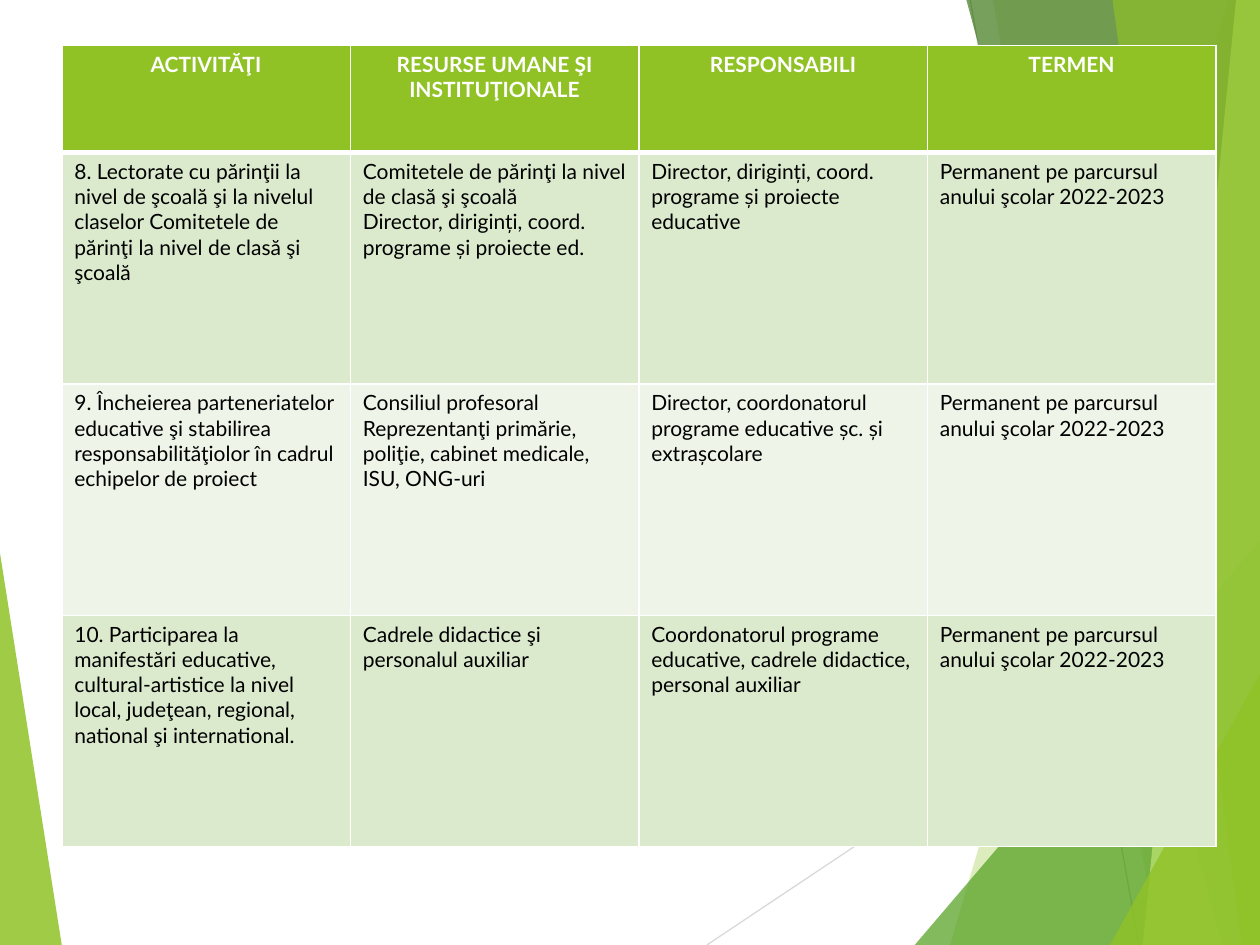
import pptx
import pptx.dml.color
import pptx.enum.shapes
import pptx.enum.text
import pptx.oxml
import pptx.oxml.ns
import pptx.util
from pptx.util import Inches

COLOURS = {
    "white": "FFFFFF", "black": "000000", "green": "90C226", "leaf": "54A021",
    "forest": "3F7819", "lime": "C0E474", "band_dark": "DBE9CD",
    "band_light": "EEF4E8", "grey": "D9D9D9", "mid_grey": "BFBFBF",
}
FONT = "Lato"
TERM = "Permanent pe parcursul anului şcolar 2022-2023"
HEADERS = ["ACTIVITĂŢI", "RESURSE UMANE ŞI INSTITUŢIONALE", "RESPONSABILI", "TERMEN"]
ACTIVITIES = [
    ["8. Lectorate cu părinţii la nivel de şcoală şi la nivelul claselor "
     "Comitetele de părinţi la nivel de clasă şi şcoală",
     "Comitetele de părinţi la nivel de clasă şi şcoală\n"
     "Director, diriginți, coord. programe și proiecte ed.",
     "Director, diriginți, coord. programe și proiecte educative", TERM],
    ["9. Încheierea parteneriatelor educative şi stabilirea "
     "responsabilităţiolor în cadrul echipelor de proiect",
     "Consiliul profesoral Reprezentanţi primărie, poliţie, cabinet medicale, ISU, ONG-uri",
     "Director, coordonatorul programe educative șc. și extrașcolare", TERM],
    ["10. Participarea la manifestări educative, cultural-artistice la nivel "
     "local, judeţean, regional, national şi international.",
     "Cadrele didactice şi personalul auxiliar",
     "Coordonatorul programe educative, cadrele didactice, personal auxiliar", TERM],
]
# Each facet reaches the right edge: top x, top y, bottom x, colour, opacity %
FACETS = [
    (9.75, 0, 7.54, "green", 30),
    (7.88, 0, 9.19, "green", 20),
    (10, 4.29, 7.26, "leaf", 72),
    (7.67, 0, 9.7, "forest", 70),
    (9.81, 0, 9.07, "lime", 70),
    (8.83, 0, 9.86, "green", 65),
    (10, 5.35, 8.81, "green", 80),
]


def rgb(name):
    return pptx.dml.color.RGBColor.from_string(COLOURS[name])


def add_polygon(slide, points, colour, opacity):
    points = [(Inches(x), Inches(y)) for x, y in dict.fromkeys(points)]
    builder = slide.shapes.build_freeform(*points[0], scale=1.0)
    builder.add_line_segments(points[1:], close=True)
    shape = builder.convert_to_shape()
    shape.shadow.inherit = False
    shape.line.fill.background()
    shape.fill.solid()
    shape.fill.fore_color.rgb = rgb(colour)
    colour_node = shape.fill._xPr.find(".//" + pptx.oxml.ns.qn("a:srgbClr"))
    colour_node.append(pptx.oxml.parse_xml(
        f'<a:alpha {pptx.oxml.ns.nsdecls("a")} val="{opacity * 1000}"/>'))


def add_hairline(slide, start, end, colour):
    line = slide.shapes.add_connector(
        pptx.enum.shapes.MSO_CONNECTOR.STRAIGHT, *map(Inches, start + end))
    line.line.color.rgb = rgb(colour)
    line.line.width = pptx.util.Pt(0.75)
    line._element.spPr.append(pptx.oxml.parse_xml(
        f'<a:effectLst {pptx.oxml.ns.nsdecls("a")}/>'))


def add_facet_background(slide, left, top, width, height):
    right, bottom = left + width, top + height
    add_polygon(slide, [(left, top + 4.39), (left + 0.49, bottom), (left, bottom)],
                "green", 85)
    add_hairline(slide, (left + 5.61, bottom), (right, top + 4.57), "grey")
    add_hairline(slide, (left + 7.7, top), (left + 9.04, bottom), "mid_grey")
    for top_x, top_y, bottom_x, colour, opacity in FACETS:
        add_polygon(slide, [(left + top_x, top + top_y), (left + bottom_x, bottom),
                            (right, bottom), (right, top + top_y)], colour, opacity)


def set_borders(cell, widths):
    """Draw white borders; widths maps L, R, T, B to points, in that order."""
    properties = cell._tc.get_or_add_tcPr()
    for index, (side, width) in enumerate(widths.items()):
        properties.insert(index, pptx.oxml.parse_xml(
            f'<a:ln{side} {pptx.oxml.ns.nsdecls("a")} w="{pptx.util.Pt(width)}">'
            f'<a:solidFill><a:srgbClr val="{COLOURS["white"]}"/></a:solidFill>'
            f'</a:ln{side}>'))


def fill_cell(cell, text, fill, is_header):
    cell.fill.solid()
    cell.fill.fore_color.rgb = rgb(fill)
    cell.text = text
    font_format = {"name": FONT, "size": pptx.util.Pt(12), "bold": is_header}
    for paragraph in cell.text_frame.paragraphs:
        if is_header:
            paragraph.alignment = pptx.enum.text.PP_ALIGN.CENTER
        for run in paragraph.runs:
            for name, value in font_format.items():
                setattr(run.font, name, value)
            run.font.color.rgb = rgb("white" if is_header else "black")


def add_activity_table(slide, left, top, width, height, header_height):
    rows = [HEADERS] + ACTIVITIES
    table = slide.shapes.add_table(
        len(rows), len(HEADERS), *map(Inches, (left, top, width, height))).table
    for column in table.columns:
        column.width = Inches(width / len(HEADERS))
    body_height = (height - header_height) / len(ACTIVITIES)
    for row_index, texts in enumerate(rows):
        is_header = row_index == 0
        table.rows[row_index].height = Inches(header_height if is_header else body_height)
        fill = "green" if is_header else ("band_light", "band_dark")[row_index % 2]
        borders = {"L": 1, "R": 1, "T": 3 if row_index == 1 else 1,
                   "B": 3 if is_header else 1}
        for column_index, text in enumerate(texts):
            cell = table.cell(row_index, column_index)
            fill_cell(cell, text, fill, is_header)
            set_borders(cell, borders)


def main():
    presentation = pptx.Presentation()
    presentation.slide_width, presentation.slide_height = Inches(10), Inches(7.5)
    slide = presentation.slides.add_slide(presentation.slide_layouts[6])
    slide.background.fill.solid()
    slide.background.fill.fore_color.rgb = rgb("white")
    add_facet_background(slide, 0, 0, 10, 7.5)
    add_activity_table(slide, 0.49, 0.36, 9.16, 6.36, header_height=0.85)
    presentation.save("out.pptx")


if __name__ == "__main__":
    main()
